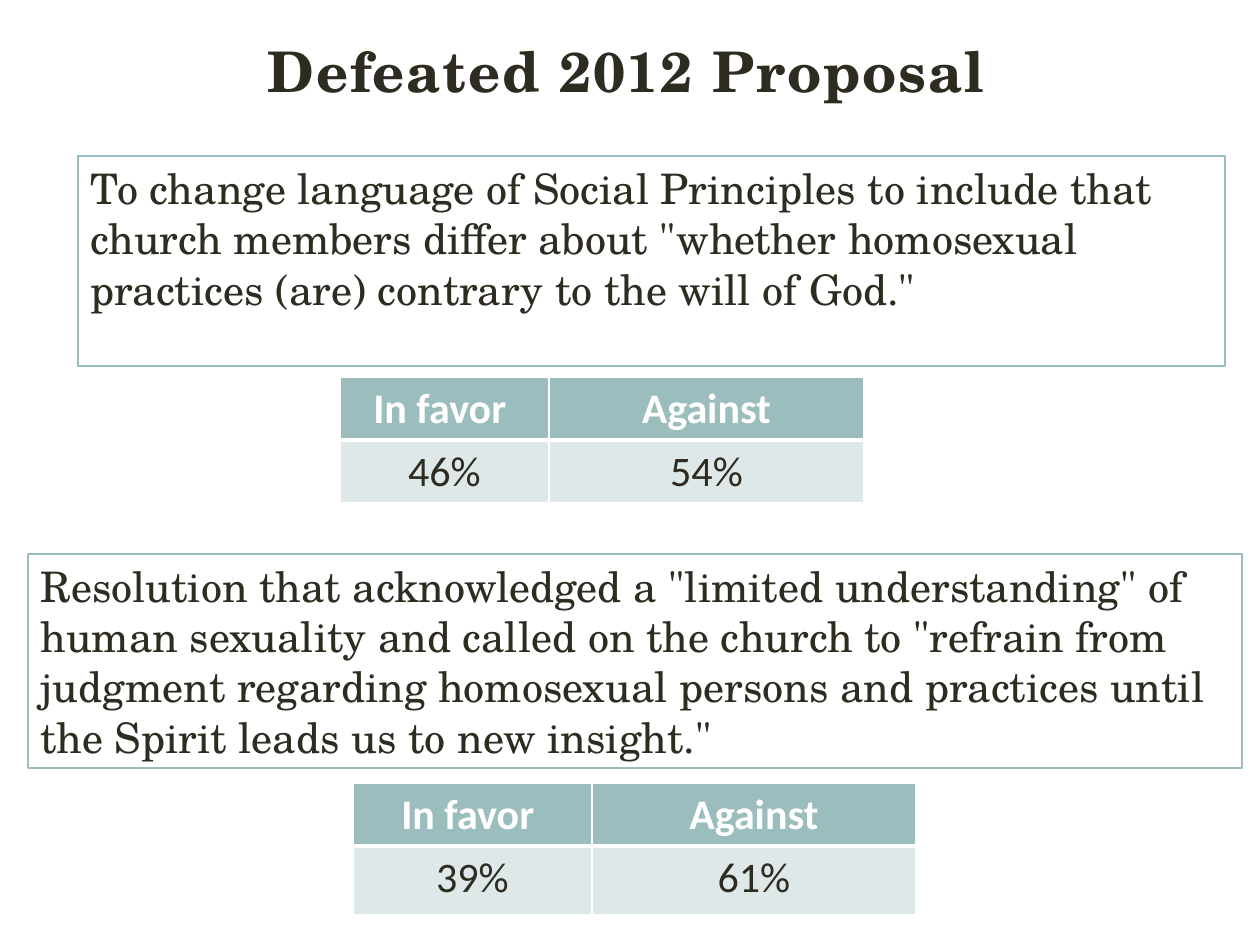
import pptx
import pptx.dml.color
import pptx.enum.shapes
import pptx.enum.text
import pptx.oxml
import pptx.oxml.ns
import pptx.util

SCALE = 914400 / 126  # EMU per px
SERIF, SANS = "TeX Gyre Schola", "Calibri"
INK, TEAL, PALE, WHITE = "2E2B21", "9CBDBD", "DEE8E8", "FFFFFF"
ALIGN = pptx.enum.text.PP_ALIGN
ANCHOR = pptx.enum.text.MSO_ANCHOR


def px(*lengths):
    return [pptx.util.Emu(round(length * SCALE)) for length in lengths]


def color(value):
    return pptx.dml.color.RGBColor.from_string(value)


def write(frame, text, font=SERIF, size=24, ink=INK, bold=False,
          align=ALIGN.LEFT, line_spacing=None, after=None, tracking=None):
    para = frame.paragraphs[0]
    para.alignment = align
    if line_spacing:
        para.line_spacing = line_spacing
    if after:
        para.space_after = pptx.util.Pt(after)
    span = para.add_run()
    span.text = text
    span.font.name = font
    span.font.size = pptx.util.Pt(size)
    span.font.bold = bold
    span.font.color.rgb = color(ink)
    if tracking:
        span.font._element.set("spc", str(tracking * 100))


def add_title(page, text, bounds):
    box = page.shapes.add_textbox(*px(*bounds))
    frame = box.text_frame
    frame.word_wrap = True
    frame.vertical_anchor = ANCHOR.MIDDLE
    write(frame, text, size=32, bold=True, align=ALIGN.CENTER,
          line_spacing=0.8, tracking=1)


def add_statement(page, text, bounds):
    box = page.shapes.add_shape(
        pptx.enum.shapes.MSO_SHAPE.RECTANGLE, *px(*bounds))
    box.shadow.inherit = False
    box.fill.solid()
    box.fill.fore_color.rgb = color(WHITE)
    box.line.color.rgb = color(TEAL)
    box.line.width = pptx.util.Pt(1.25)
    frame = box.text_frame
    frame.word_wrap = True
    frame.vertical_anchor = ANCHOR.TOP
    write(frame, text, after=24)


def set_borders(cell, **widths):
    """Draw white borders, widths in points by side, ahead of the cell fill."""
    properties = cell._tc.get_or_add_tcPr()
    for position, (side, width) in enumerate(widths.items()):
        border = pptx.oxml.parse_xml(
            f'<a:ln{side} {pptx.oxml.ns.nsdecls("a")} w="{pptx.util.Pt(width)}">'
            f'<a:solidFill><a:srgbClr val="{WHITE}"/></a:solidFill></a:ln{side}>')
        properties.insert(position, border)


def add_vote(page, shares, left, top, widths, heights):
    rows = (["In favor ", "Against"], shares)
    table = page.shapes.add_table(
        len(rows), len(widths),
        *px(left, top, sum(widths), sum(heights))).table
    for column, width in zip(table.columns, px(*widths)):
        column.width = width
    for row, height in zip(table.rows, px(*heights)):
        row.height = height
    for r, texts in enumerate(rows):
        header = r == 0
        for c, text in enumerate(texts):
            cell = table.cell(r, c)
            cell.fill.solid()
            cell.fill.fore_color.rgb = color(TEAL if header else PALE)
            set_borders(cell, L=1, R=1, T=1 if header else 3,
                        B=3 if header else 1)
            write(cell.text_frame, text, font=SANS, bold=header,
                  ink=WHITE if header else INK, align=ALIGN.CENTER)


def main():
    deck = pptx.Presentation()
    deck.slide_width, deck.slide_height = px(1260, 945)
    page = deck.slides.add_slide(deck.slide_layouts[6])

    add_title(page, "Defeated 2012 Proposal", (28, 16, 1197, 121))

    # First proposal and its vote
    add_vote(page, ["46%", "54%"], 340, 377, (209, 315), (63, 63))
    add_statement(
        page,
        "To change language of Social Principles to include that church "
        "members differ about \"whether homosexual practices (are) contrary "
        "to the will of God.\"",
        (78, 156, 1147, 210))

    # Second proposal and its vote
    add_statement(
        page,
        "Resolution that acknowledged a \"limited understanding\" of human "
        "sexuality and called on the church to \"refrain from judgment "
        "regarding homosexual persons and practices until the Spirit leads "
        "us to new insight.\"",
        (28, 554, 1214, 214))
    add_vote(page, ["39%", "61%"], 353, 783, (239, 324), (63, 69))

    deck.save("out.pptx")


if __name__ == "__main__":
    main()
